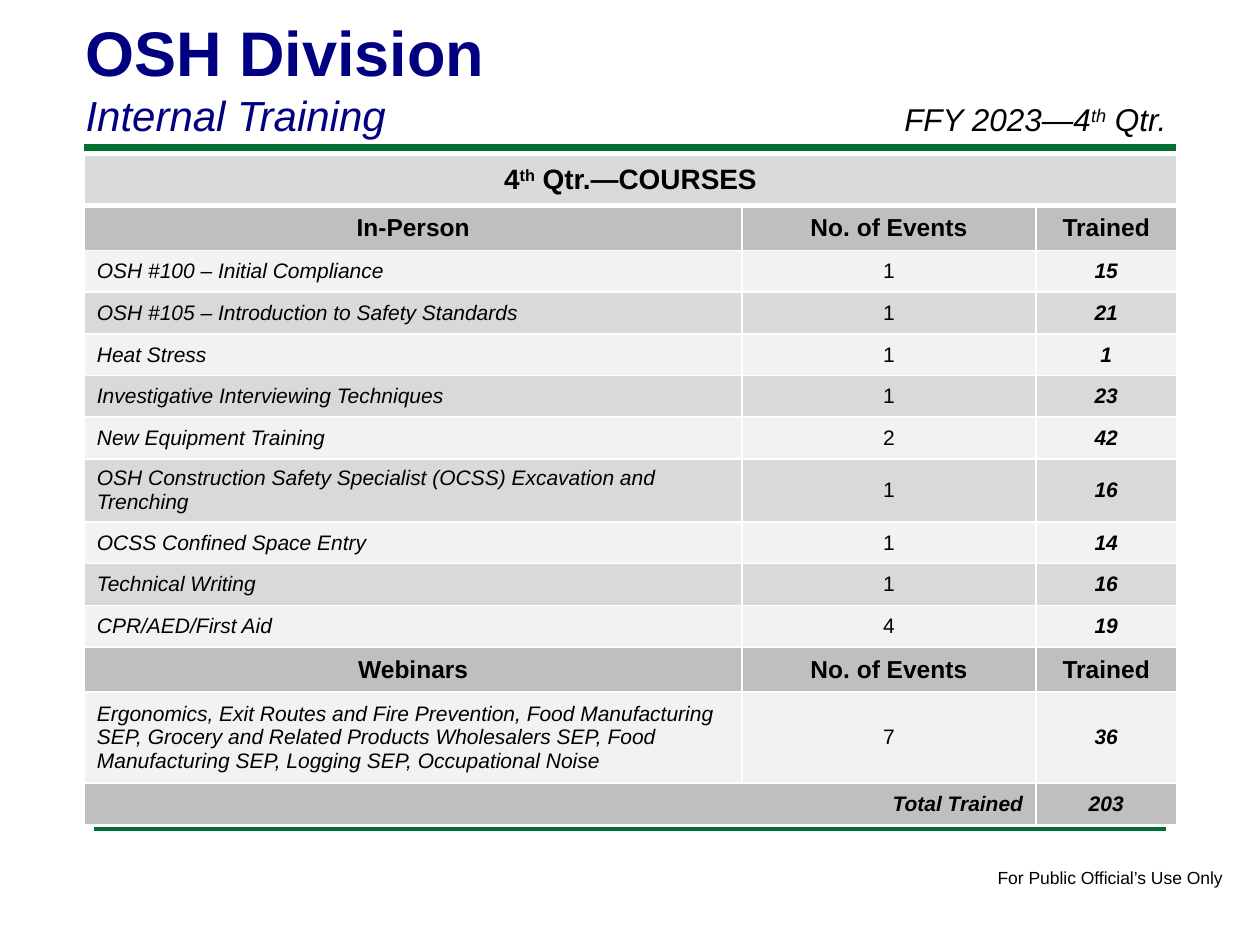
from dataclasses import dataclass
from lxml import etree
from pptx import Presentation
from pptx import util as u
from pptx.dml.color import RGBColor
from pptx.enum import shapes, text
from pptx.oxml import ns


@dataclass(frozen=True)
class Theme:
    font: str = "Arial"
    navy: str = "000080"
    black: str = "000000"
    green: str = "007030"
    white: str = "FFFFFF"
    pale: str = "F2F2F2"
    light: str = "D9D9D9"
    mid: str = "BFBFBF"
    title: int = 36
    sub: int = 24
    date: int = 18
    head: int = 16
    group: int = 14
    body: int = 12
    note: int = 10


T = Theme()
LEFT, MID, RIGHT = text.PP_ALIGN.LEFT, text.PP_ALIGN.CENTER, text.PP_ALIGN.RIGHT

COURSES = [
    ("OSH #100 – Initial Compliance", 1, 15),
    ("OSH #105 – Introduction to Safety Standards", 1, 21),
    ("Heat Stress", 1, 1),
    ("Investigative Interviewing Techniques", 1, 23),
    ("New Equipment Training", 2, 42),
    ("OSH Construction Safety Specialist (OCSS) Excavation and Trenching", 1, 16),
    ("OCSS Confined Space Entry", 1, 14),
    ("Technical Writing", 1, 16),
    ("CPR/AED/First Aid", 4, 19),
]
WEBINARS = [
    ("Ergonomics, Exit Routes and Fire Prevention, Food Manufacturing SEP, "
     "Grocery and Related Products Wholesalers SEP, Food Manufacturing SEP, "
     "Logging SEP, Occupational Noise", 7, 36),
]
COLS = [13.26, 5.92, 2.84]
ROWS = [1.02, 0.91] + [0.84] * 5 + [1.22] + [0.84] * 3 + [0.91, 1.83, 0.84]


def write(para, words, size, color=T.black, bold=False, slant=False, align=LEFT):
    para.alignment = align
    for i, part in enumerate(words.split("^")):
        run = para.add_run()
        run.text = part
        font = run.font
        font.name, font.size = T.font, u.Pt(size)
        font.bold, font.italic = bold, slant
        font.color.rgb = RGBColor.from_string(color)
        if i % 2:
            run._r.get_or_add_rPr().set("baseline", "30000")


def rule(slide, x, y, end, width):
    line = slide.shapes.add_connector(
        shapes.MSO_CONNECTOR.STRAIGHT, u.Cm(x), u.Cm(y), u.Cm(end), u.Cm(y))
    line.line.color.rgb = RGBColor.from_string(T.green)
    line.line.width = u.Pt(width)
    etree.SubElement(line._element.spPr, ns.qn("a:effectLst"))


def label(slide, words, x, y, w, h, wrap=True, **style):
    box = slide.shapes.add_textbox(u.Cm(x), u.Cm(y), u.Cm(w), u.Cm(h))
    box.text_frame.word_wrap = wrap
    write(box.text_frame.paragraphs[0], words, **style)


def heading(slide):
    box = slide.shapes.title
    box.left, box.top, box.width, box.height = map(u.Cm, (1.47, 0.15, 20.96, 2.82))
    frame = box.text_frame
    frame.word_wrap = True
    frame.vertical_anchor = text.MSO_ANCHOR.TOP
    write(frame.paragraphs[0], "OSH Division", T.title, T.navy, bold=True)
    write(frame.add_paragraph(), "Internal Training", T.sub, T.navy, slant=True)


def edge(cell, top, base):
    props = cell._tc.get_or_add_tcPr()
    for side, width in (("L", 1), ("R", 1), ("T", top), ("B", base)):
        line = etree.SubElement(props, ns.qn("a:ln" + side), w=str(u.Pt(width)))
        fill = etree.SubElement(line, ns.qn("a:solidFill"))
        etree.SubElement(fill, ns.qn("a:srgbClr"), val=T.white)


def put(cell, words, fill, size=T.body, align=MID, **style):
    cell.fill.solid()
    cell.fill.fore_color.rgb = RGBColor.from_string(fill)
    cell.vertical_anchor = text.MSO_ANCHOR.MIDDLE
    write(cell.text_frame.paragraphs[0], words, size, align=align, **style)


def group(grid, row, name, items):
    for col, words in enumerate((name, "No. of Events", "Trained")):
        put(grid.cell(row, col), words, T.mid, T.group, bold=True)
    for i, (course, count, people) in enumerate(items):
        row += 1
        fill = T.light if i % 2 else T.pale
        put(grid.cell(row, 0), course, fill, align=LEFT, slant=True)
        put(grid.cell(row, 1), str(count), fill)
        put(grid.cell(row, 2), str(people), fill, bold=True, slant=True)
    return row + 1


def table(slide):
    grid = slide.shapes.add_table(
        len(ROWS), len(COLS), u.Cm(1.7), u.Cm(3.12),
        u.Cm(sum(COLS)), u.Cm(sum(ROWS))).table
    for col, width in zip(grid.columns, COLS):
        col.width = u.Cm(width)
    for i, (row, height) in enumerate(zip(grid.rows, ROWS)):
        row.height = u.Cm(height)
        for cell in row.cells:
            edge(cell, 3 if i == 1 else 1, 3 if i == 0 else 1)
    grid.cell(0, 0).merge(grid.cell(0, 2))
    put(grid.cell(0, 0), "4^th^ Qtr.—COURSES", T.light, T.head, bold=True)
    row = group(grid, 1, "In-Person", COURSES)
    row = group(grid, row, "Webinars", WEBINARS)
    grid.cell(row, 0).merge(grid.cell(row, 1))
    total = sum(item[2] for item in COURSES + WEBINARS)
    put(grid.cell(row, 0), "Total Trained", T.mid, align=RIGHT, bold=True, slant=True)
    put(grid.cell(row, 2), str(total), T.mid, bold=True, slant=True)


def main():
    deck = Presentation()
    deck.slide_width, deck.slide_height = u.Cm(25.4), u.Cm(19.05)
    slide = deck.slides.add_slide(deck.slide_layouts[5])
    rule(slide, 1.7, 2.97, 23.7, 4)
    rule(slide, 1.9, 16.71, 23.5, 2)
    label(slide, "For Public Official’s Use Only", 19.86, 17.35, 5.1, 0.69,
          wrap=False, size=T.note)
    heading(slide)
    label(slide, "FFY 2023—4^th^ Qtr.", 17.98, 1.9, 6.35, 1.02,
          size=T.date, slant=True)
    table(slide)
    deck.save("out.pptx")


if __name__ == "__main__":
    main()
